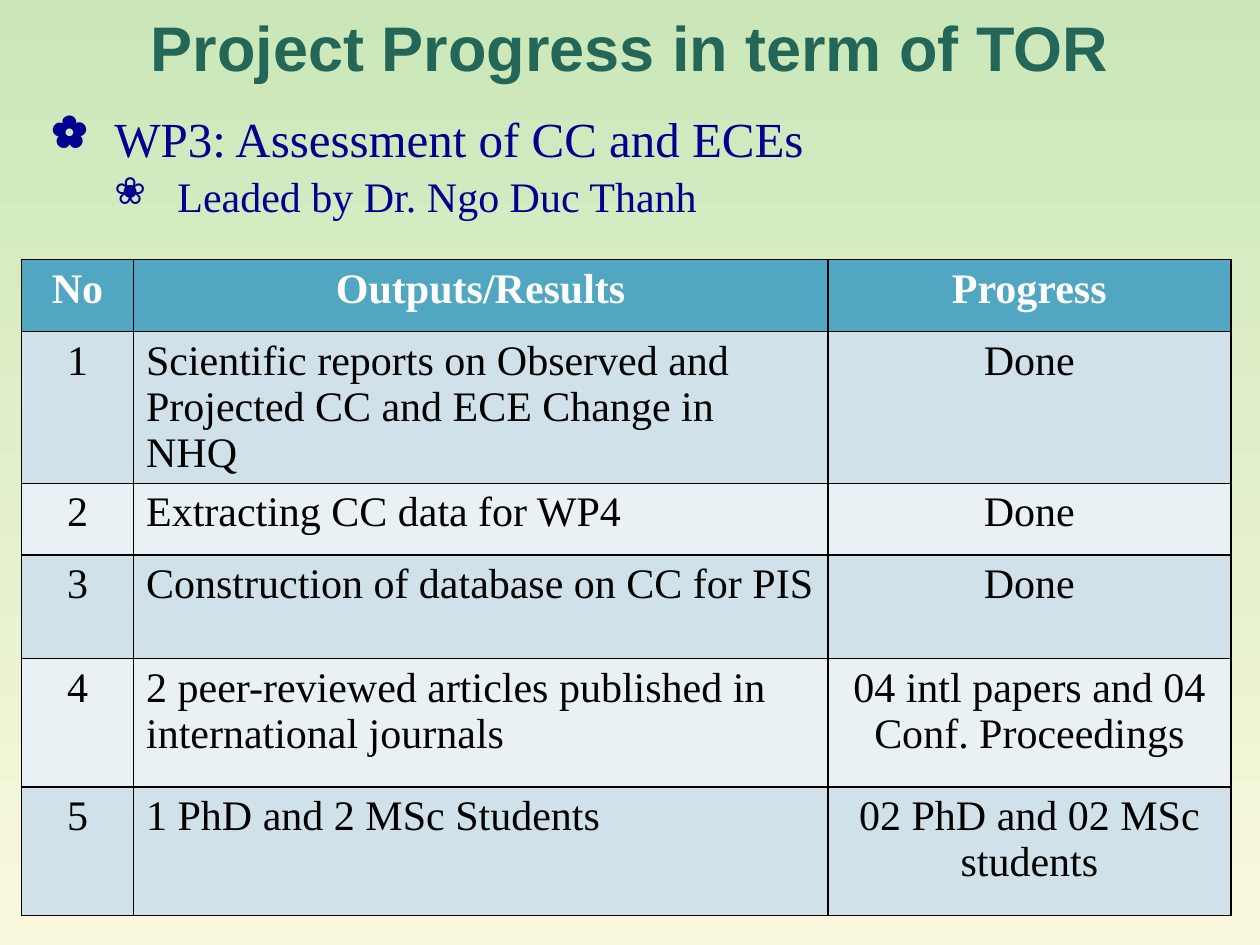
from lxml.etree import SubElement
from pptx import Presentation
from pptx.dml.color import RGBColor
from pptx.enum.text import MSO_ANCHOR, PP_ALIGN
from pptx.oxml.ns import qn
from pptx.util import Inches, Pt

COLORS = {
    "bg_top": "CBE7B9",
    "bg_bottom": "F9F8DD",
    "title": "246657",
    "bullet": "000090",
    "header": "51A6C2",
    "odd_row": "D0E1E9",
    "even_row": "E9F1F4",
    "white": "FFFFFF",
    "black": "000000",
}
SERIF = "Times New Roman"

BULLETS = [
    ("✿", "WP3: Assessment of CC and ECEs", 28),
    ("❀", "Leaded by Dr. Ngo Duc Thanh", 24),
]
COL_WIDTHS = [0.89, 5.51, 3.2]
ROW_HEIGHTS = [0.57, 1, 0.57, 0.82, 1.02, 1.02]
ROWS = [
    ("No", "Outputs/Results", "Progress"),
    ("1", "Scientific reports on Observed and Projected CC and ECE Change in NHQ", "Done"),
    ("2", "Extracting CC data for WP4", "Done"),
    ("3", "Construction of database on CC for PIS", "Done"),
    ("4", "2 peer-reviewed articles published in international journals",
     "04 intl papers and 04 Conf. Proceedings"),
    ("5", "1 PhD and 2 MSc Students", "02 PhD and 02 MSc students"),
]


def rgb(name):
    return RGBColor.from_string(COLORS[name])


def format_runs(p, font, size, color, bold=False):
    for r in p.runs:
        r.font.name = font
        r.font.size = Pt(size)
        r.font.bold = bold
        r.font.color.rgb = rgb(color)


def set_background(slide):
    fill = slide.background.fill
    fill.gradient()
    fill.gradient_angle = 270
    for stop, name in zip(fill.gradient_stops, ("bg_top", "bg_bottom")):
        stop.color.rgb = rgb(name)


def set_title(slide, text):
    sp = slide.shapes.title
    sp.left, sp.top, sp.width, sp.height = map(Inches, (0.5, 0.11, 9, 0.57))
    tf = sp.text_frame
    tf.text = text
    tf.vertical_anchor = MSO_ANCHOR.MIDDLE
    p = tf.paragraphs[0]
    p.alignment = PP_ALIGN.CENTER
    p.line_spacing = 0.95
    format_runs(p, "Arial", 36, "title", bold=True)


def set_bullet(p, char, level):
    p.level = level
    pPr = p._p.get_or_add_pPr()
    pPr.set("marL", str(Inches(0.5 * (level + 1))))
    pPr.set("indent", str(Inches(-0.5)))
    SubElement(pPr, qn("a:buSzPct"), val="90000")
    SubElement(pPr, qn("a:buChar"), char=char)


def add_bullets(slide):
    box = slide.shapes.add_textbox(Inches(0.31), Inches(0.81), Inches(9.19), Inches(1.06))
    tf = box.text_frame
    tf.word_wrap = True
    for level, (char, text, size) in enumerate(BULLETS):
        p = tf.add_paragraph() if level else tf.paragraphs[0]
        p.text = text
        set_bullet(p, char, level)
        if level:
            p.space_before = Pt(2)
        format_runs(p, SERIF, size, "bullet")


def set_borders(cell):
    tcPr = cell._tc.get_or_add_tcPr()
    for side in ("lnL", "lnR", "lnT", "lnB"):
        ln = SubElement(tcPr, qn(f"a:{side}"), w=str(Pt(1)))
        fill = SubElement(ln, qn("a:solidFill"))
        SubElement(fill, qn("a:srgbClr"), val=COLORS["black"])


def format_cell(cell, text, row, col):
    is_header = row == 0
    set_borders(cell)
    cell.fill.solid()
    band = "odd_row" if row % 2 else "even_row"
    cell.fill.fore_color.rgb = rgb("header" if is_header else band)
    cell.text_frame.text = text
    p = cell.text_frame.paragraphs[0]
    p.alignment = PP_ALIGN.CENTER if is_header or col != 1 else PP_ALIGN.LEFT
    format_runs(p, SERIF, 24, "white" if is_header else "black", bold=is_header)


def add_progress_table(slide):
    table = slide.shapes.add_table(
        len(ROWS), len(COL_WIDTHS), Inches(0.17), Inches(2.06),
        Inches(sum(COL_WIDTHS)), Inches(sum(ROW_HEIGHTS))).table
    for column, width in zip(table.columns, COL_WIDTHS):
        column.width = Inches(width)
    for row, height in zip(table.rows, ROW_HEIGHTS):
        row.height = Inches(height)
    for i, texts in enumerate(ROWS):
        for j, text in enumerate(texts):
            format_cell(table.cell(i, j), text, i, j)


def main():
    prs = Presentation()
    prs.slide_width, prs.slide_height = Inches(10), Inches(7.5)
    slide = prs.slides.add_slide(prs.slide_layouts[5])
    set_background(slide)
    set_title(slide, "Project Progress in term of TOR")
    add_progress_table(slide)
    add_bullets(slide)
    prs.save("out.pptx")


if __name__ == "__main__":
    main()
